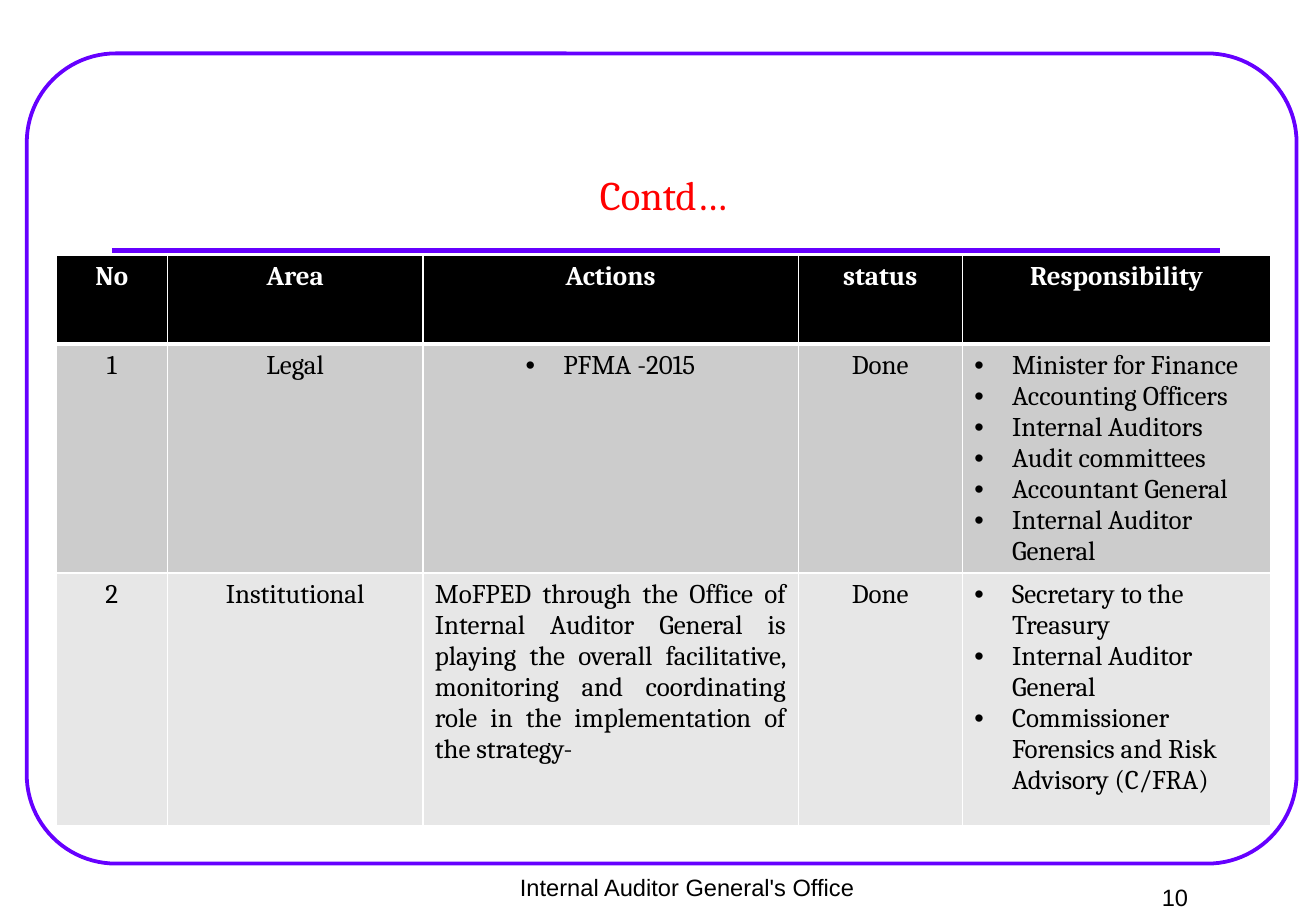
import lxml.etree
import pptx
import pptx.dml.color
import pptx.enum.shapes
import pptx.enum.text
import pptx.oxml.ns
import pptx.util

PX = 9144  # one px is a hundredth of an inch
COLORS = {
    "frame": "6600FF", "title": "FF0000", "text": "000000", "white": "FFFFFF",
    "header": "000000", "odd": "CCCCCC", "even": "E7E7E7",
}
ALIGN = pptx.enum.text.PP_ALIGN
ANCHOR = pptx.enum.text.MSO_ANCHOR
SHAPE = pptx.enum.shapes.MSO_SHAPE
LINE = pptx.enum.shapes.MSO_CONNECTOR


def px(*values):
    return [pptx.util.Emu(v * PX) for v in values]


def rgb(name):
    return pptx.dml.color.RGBColor.from_string(COLORS[name])


def sub(parent, tag, **attrs):
    return lxml.etree.SubElement(parent, pptx.oxml.ns.qn(tag), **attrs)


class Deck:
    def __init__(self, width, height):
        self.prs = pptx.Presentation()
        self.prs.slide_width, self.prs.slide_height = px(width, height)
        self.s = self.prs.slides.add_slide(self.prs.slide_layouts[5])

    def para(self, p, text, size, color="text", font="Cambria", bold=False,
             align=ALIGN.CENTER, bullet=False):
        p.text = text
        p.alignment = align
        if bullet:
            pPr = p._p.get_or_add_pPr()
            pPr.set("marL", str(31 * PX))
            pPr.set("indent", str(-31 * PX))
            sub(pPr, "a:buFont", typeface="Arial")
            sub(pPr, "a:buChar", char="•")
        p.font.size = pptx.util.Pt(size)
        p.font.name = font
        p.font.bold = bold
        p.font.color.rgb = rgb(color)

    def frame(self, x, y, w, h, radius, weight):
        sp = self.s.shapes.add_shape(SHAPE.ROUNDED_RECTANGLE, *px(x, y, w, h))
        sp.adjustments[0] = radius
        sp.shadow.inherit = False
        sp.fill.background()
        sp.line.color.rgb = rgb("frame")
        sp.line.width = pptx.util.Pt(weight)

    def rule(self, x1, x2, y, weight):
        line = self.s.shapes.add_connector(LINE.STRAIGHT, *px(x1, y, x2, y))
        line.line.color.rgb = rgb("frame")
        line.line.width = pptx.util.Pt(weight)
        sub(line._element.spPr, "a:effectLst")

    def title(self, x, y, w, h, text):
        sp = self.s.shapes.title
        sp.left, sp.top, sp.width, sp.height = px(x, y, w, h)
        # Keep the title in front of the frame
        self.s.shapes._spTree.append(sp._element)
        sp.text_frame.vertical_anchor = ANCHOR.BOTTOM
        self.para(sp.text_frame.paragraphs[0], text, 24, "title")

    def label(self, x, y, w, h, text):
        tf = self.s.shapes.add_textbox(*px(x, y, w, h)).text_frame
        tf.word_wrap = True
        self.para(tf.paragraphs[0], text, 14, font="Arial")

    def cell(self, cell, content, fill, borders, **style):
        tcPr = cell._tc.get_or_add_tcPr()
        for side, weight in zip("LRTB", borders):
            ln = sub(tcPr, f"a:ln{side}", w=str(pptx.util.Pt(weight)))
            sub(sub(ln, "a:solidFill"), "a:srgbClr", val=COLORS["white"])
        cell.fill.solid()
        cell.fill.fore_color.rgb = rgb(fill)
        tf = cell.text_frame
        lines = content if isinstance(content, list) else [content]
        for i, text in enumerate(lines):
            p = tf.add_paragraph() if i else tf.paragraphs[0]
            self.para(p, text, 16, bullet=isinstance(content, list), **style)

    def table(self, x, y, widths, heights, rows, aligns):
        table = self.s.shapes.add_table(
            len(rows), len(widths), *px(x, y, sum(widths), sum(heights))).table
        table.horz_banding = False
        for column, width in zip(table.columns, px(*widths)):
            column.width = width
        for r, (row, height) in enumerate(zip(rows, px(*heights))):
            table.rows[r].height = height
            head = r == 0
            fill = "header" if head else "odd" if r % 2 else "even"
            borders = (1, 1, 3 if r == 1 else 1, 3 if head else 1)
            for c, content in enumerate(row):
                self.cell(table.cell(r, c), content, fill, borders, bold=head,
                          color="white" if head else "text",
                          align=aligns.get((r, c), ALIGN.CENTER))


def main():
    deck = Deck(1083, 750)

    # Frame, rule and title
    deck.frame(22, 44, 1045, 667, radius=0.11, weight=2.25)
    deck.rule(92, 1004, 206, weight=3)
    deck.title(90, 60, 912, 125, "Contd…")

    # Action plan table
    rows = [
        ["No", "Area", "Actions", "status", "Responsibility"],
        ["1", "Legal", ["PFMA -2015"], "Done",
         ["Minister for Finance", "Accounting Officers", "Internal Auditors",
          "Audit committees", "Accountant General",
          "Internal Auditor General"]],
        ["2", "Institutional",
         "MoFPED through the Office of Internal Auditor General is playing "
         "the overall facilitative, monitoring and coordinating role in the "
         "implementation of the strategy-", "Done",
         ["Secretary to the Treasury", "Internal Auditor General",
          "Commissioner Forensics and Risk Advisory (C/FRA)"]],
    ]
    aligns = {(1, 4): ALIGN.LEFT, (2, 4): ALIGN.LEFT, (2, 2): ALIGN.JUSTIFY}
    deck.table(46, 210, [92, 210, 309, 135, 254], [73, 188, 208], rows, aligns)

    # Footer and page number
    deck.label(361, 714, 409, 36, "Internal Auditor General's Office")
    deck.label(872, 722, 190, 28, "10")

    deck.prs.save("out.pptx")


if __name__ == "__main__":
    main()
